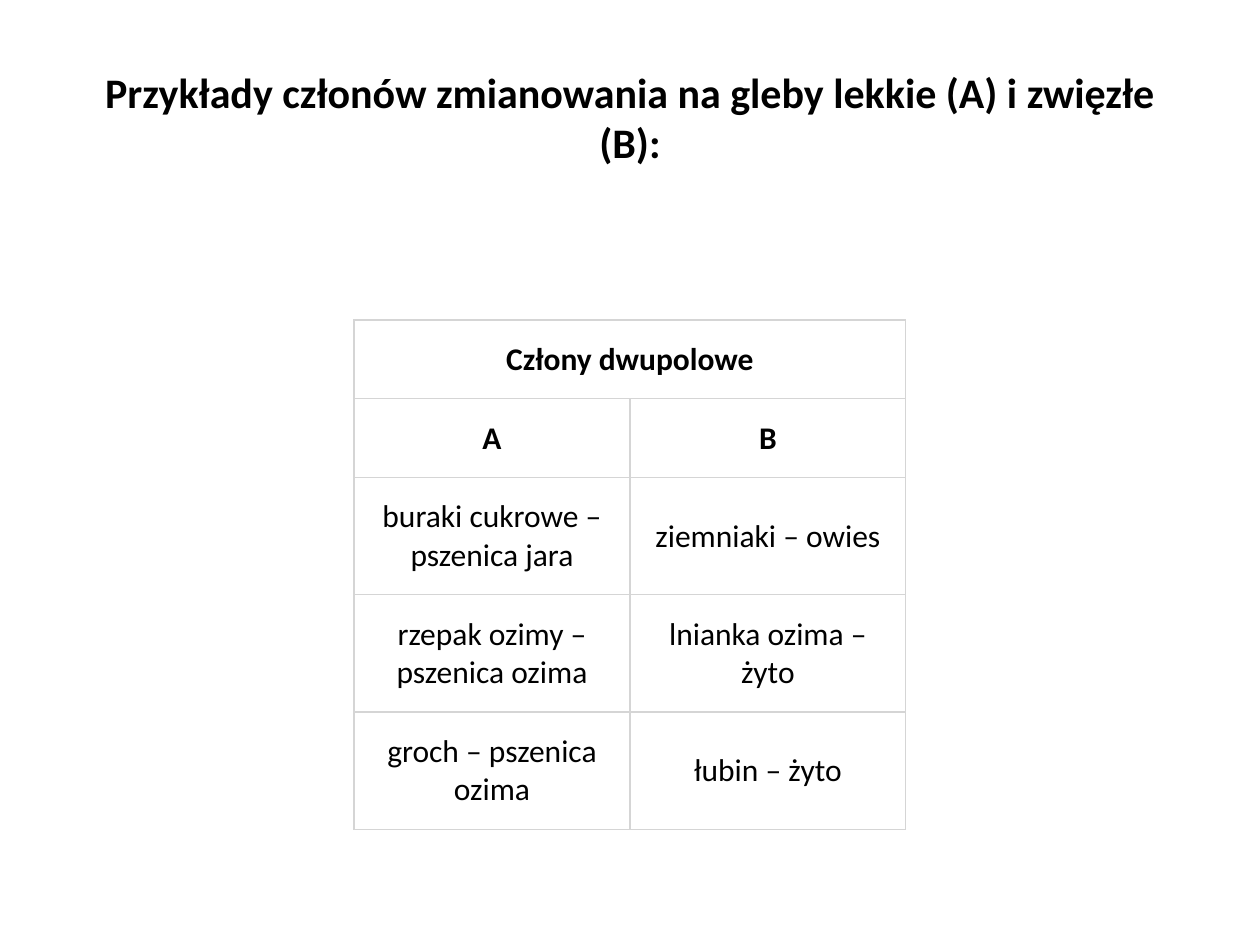
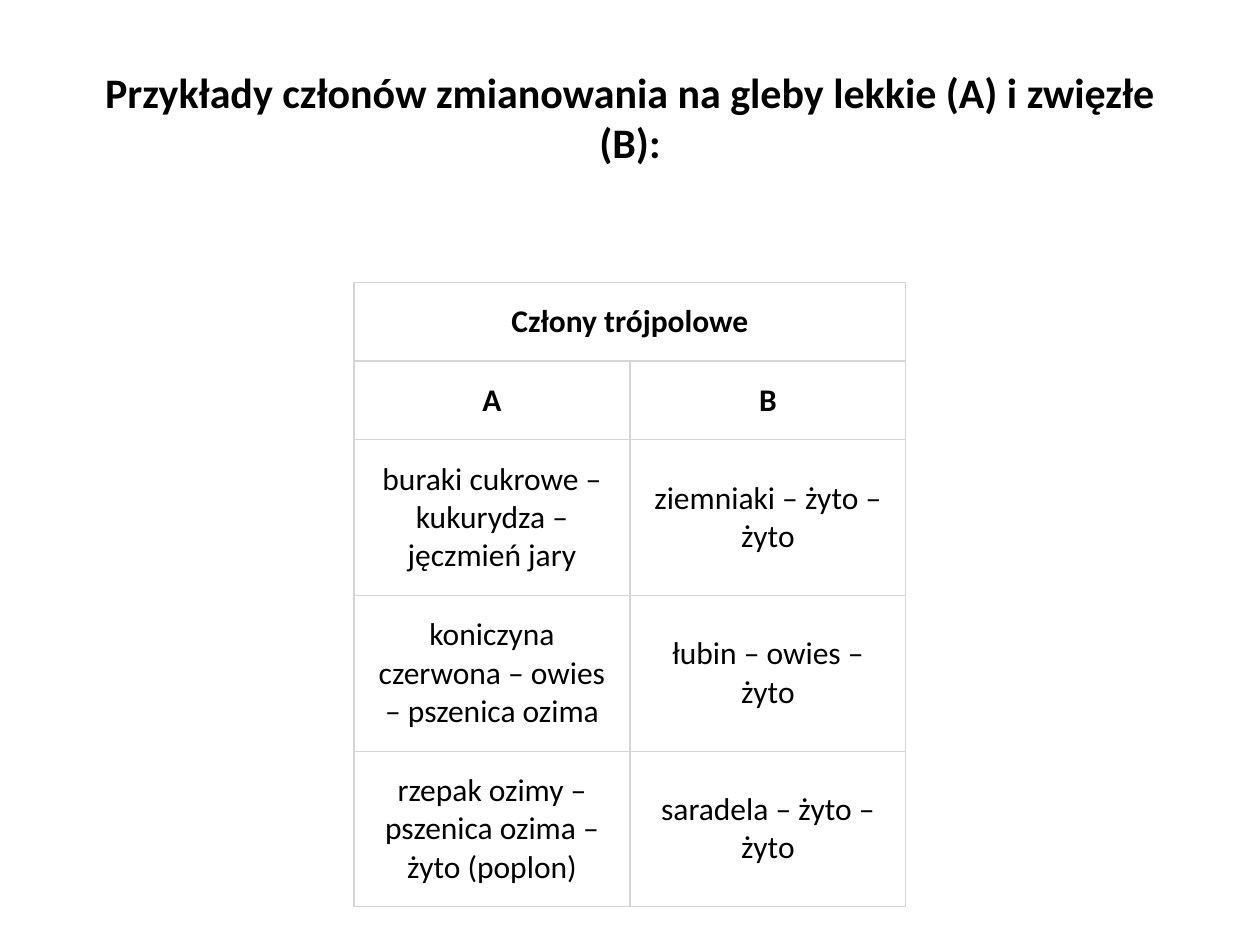
"""Build two slides with tables of crop rotation members for light and heavy soils."""
from lxml.etree import SubElement
from pptx import Presentation
from pptx.dml.color import RGBColor
from pptx.enum.text import MSO_ANCHOR, PP_ALIGN
from pptx.oxml.ns import qn
from pptx.util import Inches, Pt

COLORS = {"text": "000000", "background": "FFFFFF", "border": "D5D5D5"}
FONT = "Calibri"
TITLE = "Przykłady członów zmianowania na gleby lekkie (A) i zwięzłe (B):"
COLUMN_WIDTH = 2.19
HEADER_HEIGHT = 0.62

ROTATIONS = [
    {
        "top": 2.54,
        "row_height": 0.92,
        "heading": "Człony dwupolowe",
        "members": [
            ("buraki cukrowe – pszenica jara", "ziemniaki – owies"),
            ("rzepak ozimy – pszenica ozima", "lnianka ozima – żyto"),
            ("groch – pszenica ozima", "łubin – żyto"),
        ],
    },
    {
        "top": 2.24,
        "row_height": 1.23,
        "heading": "Człony trójpolowe",
        "members": [
            ("buraki cukrowe – kukurydza – jęczmień jary", "ziemniaki – żyto – żyto"),
            ("koniczyna czerwona – owies – pszenica ozima", "łubin – owies – żyto"),
            ("rzepak ozimy – pszenica ozima – żyto (poplon)", "saradela – żyto – żyto"),
        ],
    },
]


def write_text(text_frame, text, size, bold):
    paragraph = text_frame.paragraphs[0]
    paragraph.alignment = PP_ALIGN.CENTER
    run = paragraph.add_run()
    run.text = text
    run.font.name = FONT
    run.font.size = Pt(size)
    run.font.bold = bold
    run.font.color.rgb = RGBColor.from_string(COLORS["text"])


def style_cell(cell):
    cell.vertical_anchor = MSO_ANCHOR.MIDDLE
    cell.margin_left = cell.margin_right = Inches(0.12)
    cell.margin_top = cell.margin_bottom = Inches(0.16)
    properties = cell._tc.get_or_add_tcPr()
    for side in ("a:lnL", "a:lnR", "a:lnT", "a:lnB"):
        line = SubElement(properties, qn(side), w=str(Pt(0.75)))
        line_fill = SubElement(line, qn("a:solidFill"))
        SubElement(line_fill, qn("a:srgbClr"), val=COLORS["border"])
    cell.fill.solid()
    cell.fill.fore_color.rgb = RGBColor.from_string(COLORS["background"])


presentation = Presentation()
presentation.slide_width = Inches(10)
presentation.slide_height = Inches(7.5)
title_only = presentation.slide_layouts[5]

for rotation in ROTATIONS:
    slide = presentation.slides.add_slide(title_only)
    slide.background.fill.solid()
    slide.background.fill.fore_color.rgb = RGBColor.from_string(COLORS["background"])

    title = slide.shapes.title
    title.left, title.top = Inches(0.5), Inches(0.3)
    title.width, title.height = Inches(9), Inches(1.25)
    title.text_frame.vertical_anchor = MSO_ANCHOR.MIDDLE
    write_text(title.text_frame, TITLE, 24, True)

    rows = [(rotation["heading"],), ("A", "B"), *rotation["members"]]
    heights = [HEADER_HEIGHT] * 2 + [rotation["row_height"]] * len(rotation["members"])
    table = slide.shapes.add_table(
        len(rows), 2, Inches(2.81), Inches(rotation["top"]),
        Inches(2 * COLUMN_WIDTH), Inches(sum(heights)),
    ).table
    for column in table.columns:
        column.width = Inches(COLUMN_WIDTH)
    for row, height in zip(table.rows, heights):
        row.height = Inches(height)
    for cell in table.iter_cells():
        style_cell(cell)
    table.cell(0, 0).merge(table.cell(0, 1))
    for row_index, texts in enumerate(rows):
        for column_index, text in enumerate(texts):
            cell = table.cell(row_index, column_index)
            write_text(cell.text_frame, text, 18, row_index < 2)

presentation.save("out.pptx")
